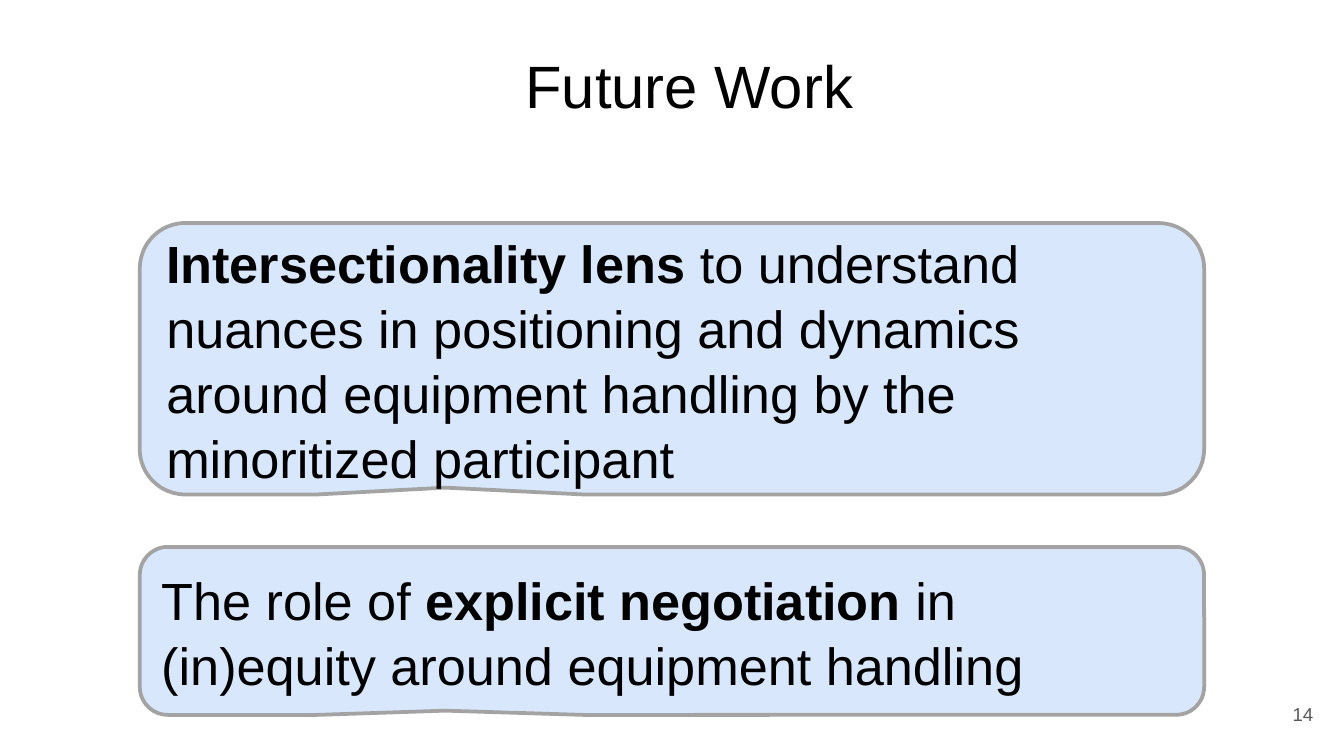
import pptx
import pptx.util
import pptx.dml.color
import pptx.enum.shapes
import pptx.enum.text
from dataclasses import dataclass

Pt = pptx.util.Pt
RGB = pptx.dml.color.RGBColor.from_string
ALIGN = pptx.enum.text.PP_ALIGN
MIDDLE = pptx.enum.text.MSO_ANCHOR.MIDDLE


@dataclass(frozen=True)
class Theme:
    font: str = "Arial"
    text: str = "000000"
    muted: str = "595959"
    fill: str = "D9E7FD"
    line: str = "A3A3A3"
    title_size: int = 32
    body_size: int = 28
    number_size: int = 10


THEME = Theme()


def add_run(p, text, size, color=THEME.text, bold=False):
    r = p.add_run()
    r.text = text
    r.font.name = THEME.font
    r.font.size = Pt(size)
    r.font.bold = bold
    r.font.color.rgb = RGB(color)


def set_title(s, text):
    sp = s.shapes.title
    sp.left, sp.top, sp.width, sp.height = Pt(274.3), Pt(22.3), Pt(192.2), Pt(46.1)
    tf = sp.text_frame
    tf.word_wrap = False
    tf.auto_size = pptx.enum.text.MSO_AUTO_SIZE.NONE
    tf.vertical_anchor = pptx.enum.text.MSO_ANCHOR.TOP
    p = tf.paragraphs[0]
    p.alignment = ALIGN.LEFT
    add_run(p, text, THEME.title_size)


def add_callout(s, top, height, runs):
    sp = s.shapes.add_shape(
        pptx.enum.shapes.MSO_SHAPE.ROUNDED_RECTANGULAR_CALLOUT,
        Pt(74.9), Pt(top), Pt(570.2), Pt(height))
    # Pull the pointer back inside the bottom edge
    for i, value in enumerate((-0.213, 0.475, 0.167)):
        sp.adjustments[i] = value
    sp.shadow.inherit = False
    sp.fill.solid()
    sp.fill.fore_color.rgb = RGB(THEME.fill)
    sp.line.color.rgb = RGB(THEME.line)
    sp.line.width = Pt(2)
    tf = sp.text_frame
    tf.word_wrap = True
    tf.vertical_anchor = MIDDLE
    p = tf.paragraphs[0]
    p.alignment = ALIGN.LEFT
    p.line_spacing = 1.04
    for text, bold in runs:
        add_run(p, text, THEME.body_size, bold=bold)


def add_slide_number(s, text):
    sp = s.shapes.add_textbox(Pt(667.4), Pt(367.2), Pt(43.2), Pt(31))
    tf = sp.text_frame
    tf.word_wrap = True
    tf.vertical_anchor = MIDDLE
    tf.margin_left = tf.margin_right = tf.margin_top = tf.margin_bottom = Pt(7.2)
    p = tf.paragraphs[0]
    p.alignment = ALIGN.RIGHT
    add_run(p, text, THEME.number_size, THEME.muted)


def main():
    prs = pptx.Presentation()
    prs.slide_width, prs.slide_height = Pt(720), Pt(405)
    s = prs.slides.add_slide(prs.slide_layouts[5])

    # Heading
    set_title(s, "Future Work")

    # Directions for future work
    add_callout(s, 119.5, 145.4, [
        ("Intersectionality lens ", True),
        ("to understand nuances in positioning and dynamics around "
         "equipment handling by the minoritized participant", False)])
    add_callout(s, 293, 90, [
        ("The role of ", False),
        ("explicit negotiation ", True),
        ("in (in)equity around equipment handling", False)])

    # Footer
    add_slide_number(s, "14")

    prs.save("out.pptx")


if __name__ == "__main__":
    main()
